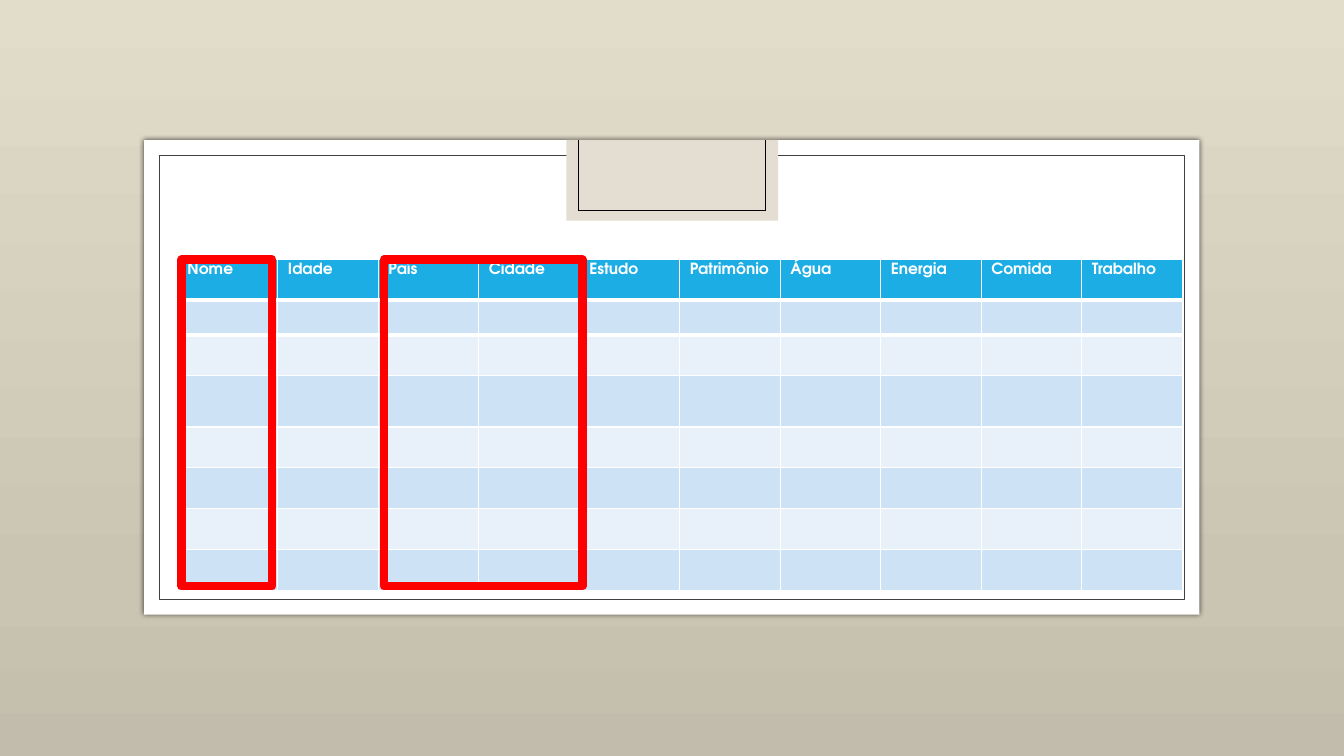
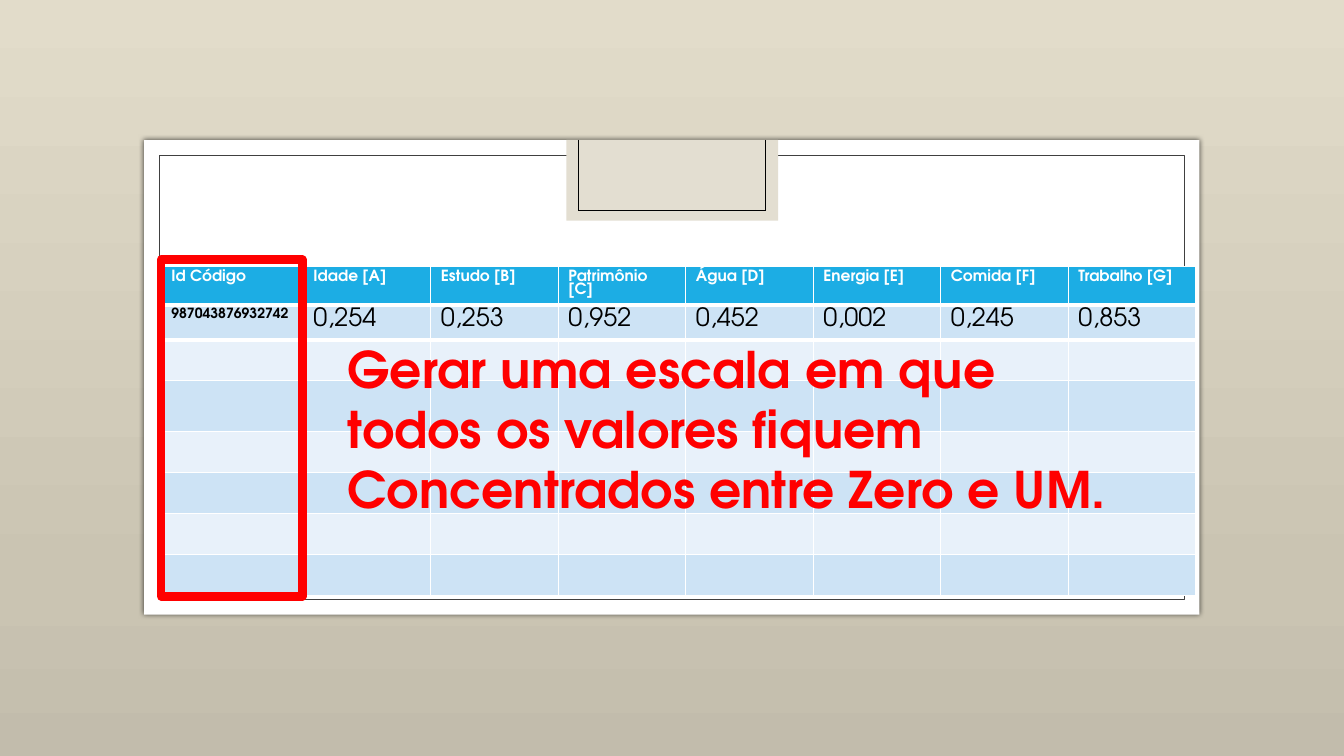
"""Builds two table slides on a clipboard-style panel."""
import copy

import pptx
import pptx.dml.color
import pptx.enum.shapes
import pptx.oxml
import pptx.oxml.ns
import pptx.util
from lxml import etree

Pt = pptx.util.Pt
RGBColor = pptx.dml.color.RGBColor
qn = pptx.oxml.ns.qn

WHITE = RGBColor(0xFF, 0xFF, 0xFF)
BLACK = RGBColor(0x00, 0x00, 0x00)
RED = RGBColor(0xFF, 0x00, 0x00)
FRAME_GRAY = RGBColor(0x40, 0x40, 0x40)
TAB_BEIGE = RGBColor(0xE3, 0xDE, 0xD1)
HEADER_BLUE = RGBColor(0x1C, 0xAD, 0xE4)
BAND_DARK = RGBColor(0xCD, 0xE3, 0xF5)
BAND_LIGHT = RGBColor(0xE8, 0xF1, 0xFA)
BACKGROUND_TOP = RGBColor(0xE2, 0xDC, 0xCA)
BACKGROUND_MIDDLE = RGBColor(0xCA, 0xC4, 0xB2)
BACKGROUND_BOTTOM = RGBColor(0xC2, 0xBC, 0xAC)
FONT = "TeX Gyre Adventor"

PANEL_TOP = 100
TAB_LEFT, TAB_RIGHT, TAB_BOTTOM = 413.3, 546.5, 150.5
BODY_ROWS = [25, 29.2, 36.5] + [29.2] * 4
HEADER_RULE_SIDES = ["a:lnB", "a:lnT"]
PANEL_SHADOW = (
    '<a:outerShdw xmlns:a="http://schemas.openxmlformats.org/drawingml/2006/main"'
    ' blurRad="50800" dist="0" dir="0"><a:srgbClr val="000000">'
    '<a:alpha val="66000"/></a:srgbClr></a:outerShdw>'
)

SLIDES = [
    {
        "origin": (126.7, 185.5),
        "columns": [71.8] * 10,
        "header_height": 28.8,
        "texts": [["Nome", "Idade", "País", "Cidade", "Estudo", "Patrimônio",
                   "Água", "Energia", "Comida", "Trabalho"]],
        "highlights": [(274.3, 185.5, 141.8, 233.3), (129.6, 185.5, 64.8, 233.3)],
        "message": None,
    },
    {
        "origin": (115.2, 190.5),
        "columns": [101.5] + [91.1] * 7,
        "header_height": 27.2,
        "texts": [["Id Código", "Idade [A]", "Estudo [B]", "Patrimônio [C]",
                   "Água [D]", "Energia [E]", "Comida [F]", "Trabalho [G]"],
                  ["987043876932742", "0,254", "0,253", "0,952",
                   "0,452", "0,002", "0,245", "0,853"]],
        "highlights": [(115.2, 185.5, 100.8, 240.5)],
        "message": "Gerar uma escala em que todos os valores fiquem "
                   "Concentrados entre Zero e UM.",
    },
]


def add_box(slide, box, fill=None, line=None, width=0.5):
    """Add a rectangle with an optional fill and outline."""
    shape = slide.shapes.add_shape(
        pptx.enum.shapes.MSO_SHAPE.RECTANGLE, *[Pt(length) for length in box])
    if fill is None:
        shape.fill.background()
    else:
        shape.fill.solid()
        shape.fill.fore_color.rgb = fill
    if line is None:
        shape.line.fill.background()
    else:
        shape.line.color.rgb = line
        shape.line.width = Pt(width)
    shape.shadow.inherit = False
    return shape


def set_font(paragraph, size, color, bold):
    """Apply the deck font to a paragraph."""
    paragraph.font.name = FONT
    paragraph.font.size = Pt(size)
    paragraph.font.color.rgb = color
    paragraph.font.bold = bold


presentation = pptx.Presentation()
presentation.slide_width = Pt(960)
presentation.slide_height = Pt(540)

master = presentation.slide_master
background = master.background.fill
background.gradient()
background.gradient_angle = 270
stop_list = master.element.find(".//" + qn("a:gsLst"))
stop_list.insert(1, copy.deepcopy(stop_list[0]))
stops = zip(background.gradient_stops, (0, 0.77, 1),
            (BACKGROUND_TOP, BACKGROUND_MIDDLE, BACKGROUND_BOTTOM))
for stop, position, color in stops:
    stop.position = position
    stop.color.rgb = color

for content in SLIDES:
    slide = presentation.slides.add_slide(presentation.slide_layouts[6])

    panel = add_box(slide, (103, PANEL_TOP, 753.8, 339.1), fill=WHITE)
    panel.element.spPr.find(qn("a:effectLst")).append(pptx.oxml.parse_xml(PANEL_SHADOW))
    add_box(slide, (113.8, 110.9, 732.2, 317.5), line=FRAME_GRAY)
    add_box(slide, (404.6, PANEL_TOP, 151.2, 57.6), fill=TAB_BEIGE)
    for ends in [(TAB_LEFT, PANEL_TOP, TAB_LEFT, TAB_BOTTOM),
                 (TAB_RIGHT, PANEL_TOP, TAB_RIGHT, TAB_BOTTOM),
                 (TAB_LEFT, TAB_BOTTOM, TAB_RIGHT, TAB_BOTTOM)]:
        connector = slide.shapes.add_connector(
            pptx.enum.shapes.MSO_CONNECTOR.STRAIGHT, *[Pt(length) for length in ends])
        connector.line.color.rgb = BLACK
        connector.line.width = Pt(0.5)
        etree.SubElement(connector.element.spPr, qn("a:effectLst"))

    heights = [content["header_height"]] + BODY_ROWS
    columns = content["columns"]
    left, top = content["origin"]
    table = slide.shapes.add_table(
        len(heights), len(columns), Pt(left), Pt(top),
        Pt(sum(columns)), Pt(sum(heights))).table
    for column, width in zip(table.columns, columns):
        column.width = Pt(width)
    for row_index, height in enumerate(heights):
        row = table.rows[row_index]
        row.height = Pt(height)
        for column_index, cell in enumerate(row.cells):
            cell.margin_top = Pt(3)
            cell.margin_bottom = Pt(0)
            cell.fill.solid()
            paragraph = cell.text_frame.paragraphs[0]
            paragraph.line_spacing = 0.92
            if row_index < len(content["texts"]):
                paragraph.text = content["texts"][row_index][column_index]
            if row_index == 0:
                cell.fill.fore_color.rgb = HEADER_BLUE
                set_font(paragraph, 11, WHITE, True)
            else:
                cell.fill.fore_color.rgb = BAND_DARK if row_index % 2 else BAND_LIGHT
                is_code = column_index == 0
                set_font(paragraph, 10 if is_code else 18, BLACK, is_code)
            if row_index < len(HEADER_RULE_SIDES):
                rule = etree.Element(qn(HEADER_RULE_SIDES[row_index]), w=str(Pt(3)))
                rule_fill = etree.SubElement(rule, qn("a:solidFill"))
                etree.SubElement(rule_fill, qn("a:srgbClr"), val=str(WHITE))
                cell.fill.fore_color
                cell._tc.tcPr.insert(0, rule)

    for box in content["highlights"]:
        add_box(slide, box, line=RED, width=6)

    if content["message"]:
        message = slide.shapes.add_textbox(Pt(241.2), Pt(237.6), Pt(566), Pt(138.2))
        message.text_frame.word_wrap = True
        paragraph = message.text_frame.paragraphs[0]
        paragraph.text = content["message"]
        set_font(paragraph, 36, RED, True)

presentation.save("out.pptx")
